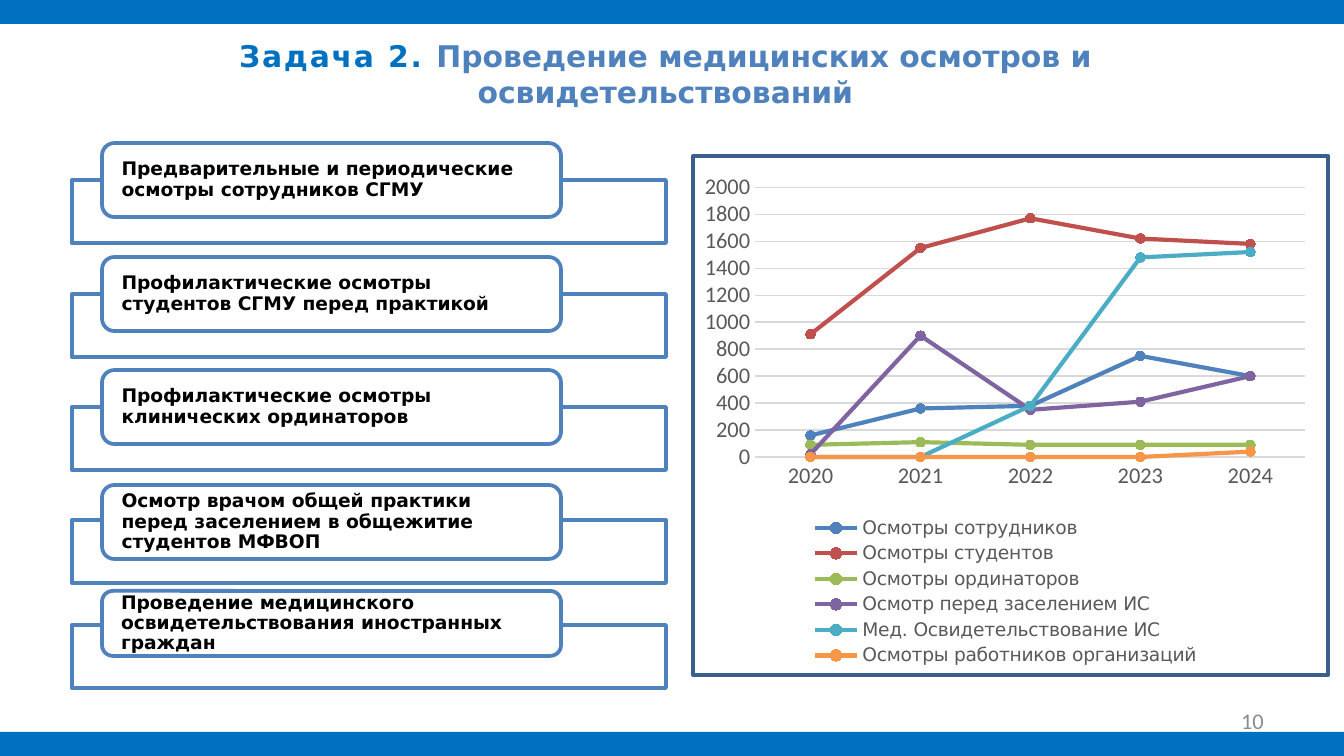
import pptx
import pptx.chart.data
import pptx.dml.color
import pptx.enum.chart
import pptx.enum.shapes
import pptx.enum.text
import pptx.oxml
import pptx.oxml.ns
import pptx.util

RGBColor = pptx.dml.color.RGBColor
Shapes = pptx.enum.shapes.MSO_SHAPE
Anchor = pptx.enum.text.MSO_ANCHOR
Align = pptx.enum.text.PP_ALIGN
Pt = pptx.util.Pt
qn = pptx.oxml.ns.qn

BAR_BLUE = RGBColor(0x00, 0x70, 0xC0)
BLUE = RGBColor(0x4F, 0x81, 0xBD)
FRAME_BLUE = RGBColor(0x3A, 0x5F, 0x8C)
RED = RGBColor(0xC0, 0x50, 0x4D)
GREEN = RGBColor(0x9B, 0xBB, 0x59)
PURPLE = RGBColor(0x80, 0x64, 0xA2)
TEAL = RGBColor(0x4B, 0xAC, 0xC6)
ORANGE = RGBColor(0xF7, 0x96, 0x46)
WHITE = RGBColor(0xFF, 0xFF, 0xFF)
BLACK = RGBColor(0x00, 0x00, 0x00)
GRID_GRAY = RGBColor(0xD9, 0xD9, 0xD9)
LABEL_GRAY = RGBColor(0x59, 0x59, 0x59)
NUMBER_GRAY = RGBColor(0x8C, 0x8C, 0x8C)

PX_PER_INCH = 134.4
WIDTH, HEIGHT = 1344, 756

# Text, top and height of the label, top of the box behind it
TASKS = [
    ("Предварительные и периодические осмотры сотрудников СГМУ", 143, 74, 180),
    ("Профилактические осмотры студентов СГМУ перед практикой", 257, 74, 294),
    ("Профилактические осмотры клинических ординаторов", 370, 74, 407),
    ("Осмотр врачом общей практики перед заселением в общежитие студентов МФВОП", 485, 74, 520),
    ("Проведение медицинского освидетельствования иностранных граждан", 591, 65, 625),
]
YEARS = ["2020", "2021", "2022", "2023", "2024"]
SERIES = [
    ("Осмотры сотрудников", BLUE, (160, 360, 380, 750, 600)),
    ("Осмотры студентов", RED, (910, 1550, 1770, 1620, 1580)),
    ("Осмотры ординаторов", GREEN, (90, 110, 90, 90, 90)),
    ("Осмотр перед заселением ИС", PURPLE, (20, 900, 350, 410, 600)),
    ("Мед. Освидетельствование ИС", TEAL, (0, 0, 380, 1480, 1520)),
    ("Осмотры работников организаций", ORANGE, (0, 0, 0, 0, 40)),
]


def px(*lengths):
    return [pptx.util.Inches(length / PX_PER_INCH) for length in lengths]


class SlideBuilder:
    text_font = "DejaVu Sans"
    number_font = "Calibri"

    def __init__(self, slide):
        self.slide = slide

    def style(self, font, size, color, bold=False, name=None):
        font.name = name or self.text_font
        font.size = Pt(size)
        font.bold = bold
        font.color.rgb = color

    def box(self, bounds, fill=None, line=None, kind=Shapes.RECTANGLE, alpha=None):
        shape = self.slide.shapes.add_shape(kind, *px(*bounds))
        shape.shadow.inherit = False
        if fill is None:
            shape.fill.background()
        else:
            shape.fill.solid()
            shape.fill.fore_color.rgb = fill
        if alpha is not None:
            color = shape.fill._xPr.find(".//" + qn("a:srgbClr"))
            color.append(pptx.oxml.parse_xml(
                f'<a:alpha {pptx.oxml.ns.nsdecls("a")} val="{alpha * 1000}"/>'))
        if line is None:
            shape.line.fill.background()
        else:
            shape.line.color.rgb = line
            shape.line.width = Pt(2)
        return shape

    def label(self, bounds, text):
        shape = self.box(bounds, WHITE, BLUE, Shapes.ROUNDED_RECTANGLE)
        frame = shape.text_frame
        frame.word_wrap = True
        frame.vertical_anchor = Anchor.MIDDLE
        frame.margin_left, frame.margin_right, frame.margin_top, frame.margin_bottom = px(16, 16, 0, 0)
        frame.text = text
        paragraph = frame.paragraphs[0]
        paragraph.alignment = Align.LEFT
        paragraph.line_spacing = 0.9
        self.style(paragraph.runs[0].font, 10, BLACK, True)

    def title(self, bounds, lead, rest):
        shape = self.slide.shapes.title
        shape.left, shape.top, shape.width, shape.height = px(*bounds)
        frame = shape.text_frame
        frame.word_wrap = True
        frame.auto_size = pptx.enum.text.MSO_AUTO_SIZE.NONE
        frame.vertical_anchor = Anchor.TOP
        paragraph = frame.paragraphs[0]
        paragraph.alignment = Align.CENTER
        for text, color, spacing in ((lead, BAR_BLUE, 100), (rest, BLUE, 0)):
            run = paragraph.add_run()
            run.text = text
            self.style(run.font, 16, color, True)
            run.font._element.set("spc", str(spacing))

    def page_number(self, bounds, text):
        frame = self.slide.shapes.add_textbox(*px(*bounds)).text_frame
        frame.word_wrap = True
        frame.vertical_anchor = Anchor.MIDDLE
        frame.text = text
        paragraph = frame.paragraphs[0]
        paragraph.alignment = Align.RIGHT
        self.style(paragraph.runs[0].font, 12, NUMBER_GRAY, name=self.number_font)

    def manual_layout(self, element, x, y, width, height, inner=False):
        """Place a chart part by fractions of the chart area."""
        for old in element.findall(qn("c:layout")):
            element.remove(old)
        target = '<c:layoutTarget val="inner"/>' if inner else ""
        layout = pptx.oxml.parse_xml(
            f'<c:layout {pptx.oxml.ns.nsdecls("c")}><c:manualLayout>{target}'
            '<c:xMode val="edge"/><c:yMode val="edge"/>'
            f'<c:x val="{x}"/><c:y val="{y}"/><c:w val="{width}"/><c:h val="{height}"/>'
            '</c:manualLayout></c:layout>')
        element.insert(0 if inner else 1, layout)

    def line_chart(self, bounds):
        data = pptx.chart.data.CategoryChartData()
        data.categories = YEARS
        for name, _, values in SERIES:
            data.add_series(name, values)
        chart = self.slide.shapes.add_chart(
            pptx.enum.chart.XL_CHART_TYPE.LINE_MARKERS, *px(*bounds), data).chart
        chart.has_title = False
        self.style(chart.font, 10, BLACK, name=self.number_font)
        plot = chart.plots[0]
        plot.vary_by_categories = False
        for series, (_, color, _) in zip(plot.series, SERIES):
            series.smooth = False
            series.format.line.color.rgb = color
            series.format.line.width = Pt(2.25)
            marker = series.marker
            marker.style = pptx.enum.chart.XL_MARKER_STYLE.CIRCLE
            marker.size = 5
            marker.format.fill.solid()
            marker.format.fill.fore_color.rgb = color
            marker.format.line.color.rgb = color

        # Axes
        values_axis, years_axis = chart.value_axis, chart.category_axis
        for axis in (values_axis, years_axis):
            axis.major_tick_mark = pptx.enum.chart.XL_TICK_MARK.NONE
            self.style(axis.tick_labels.font, 12, LABEL_GRAY, name=self.number_font)
        values_axis.minimum_scale, values_axis.maximum_scale = 0, 2000
        values_axis.major_unit = 200
        values_axis.format.line.fill.background()
        for rule in (values_axis.major_gridlines.format.line, years_axis.format.line):
            rule.color.rgb = GRID_GRAY
            rule.width = Pt(0.75)

        # Legend in one column under the plot
        chart.has_legend = True
        chart.legend.position = pptx.enum.chart.XL_LEGEND_POSITION.BOTTOM
        chart.legend.include_in_layout = False
        self.style(chart.legend.font, 10, LABEL_GRAY)
        self.manual_layout(chart.legend._element, 0.18, 0.68, 0.64, 0.31)
        plot_area = chart._chartSpace.find(".//" + qn("c:plotArea"))
        self.manual_layout(plot_area, 0.1, 0.04, 0.88, 0.53, inner=True)


def main():
    presentation = pptx.Presentation()
    presentation.slide_width, presentation.slide_height = px(WIDTH, HEIGHT)
    builder = SlideBuilder(presentation.slides.add_slide(presentation.slide_layouts[5]))

    # Bars and title
    for top in (0, HEIGHT - 24):
        builder.box((0, top, WIDTH, 24), BAR_BLUE)
    builder.title((36, 31, 1259, 86), "Задача 2. ",
                  "Проведение медицинских осмотров и освидетельствований")

    # Tasks
    for text, top, height, back_top in TASKS:
        builder.box((72, back_top, 594, 63), WHITE, BLUE, alpha=90)
        builder.label((102, top, 459, height), text)

    # Chart, its frame and the page number
    builder.page_number((964, 701, 313, 40), "10")
    builder.line_chart((693, 167, 625, 509))
    builder.box((693, 156, 635, 519), line=FRAME_BLUE)

    presentation.save("out.pptx")


if __name__ == "__main__":
    main()
